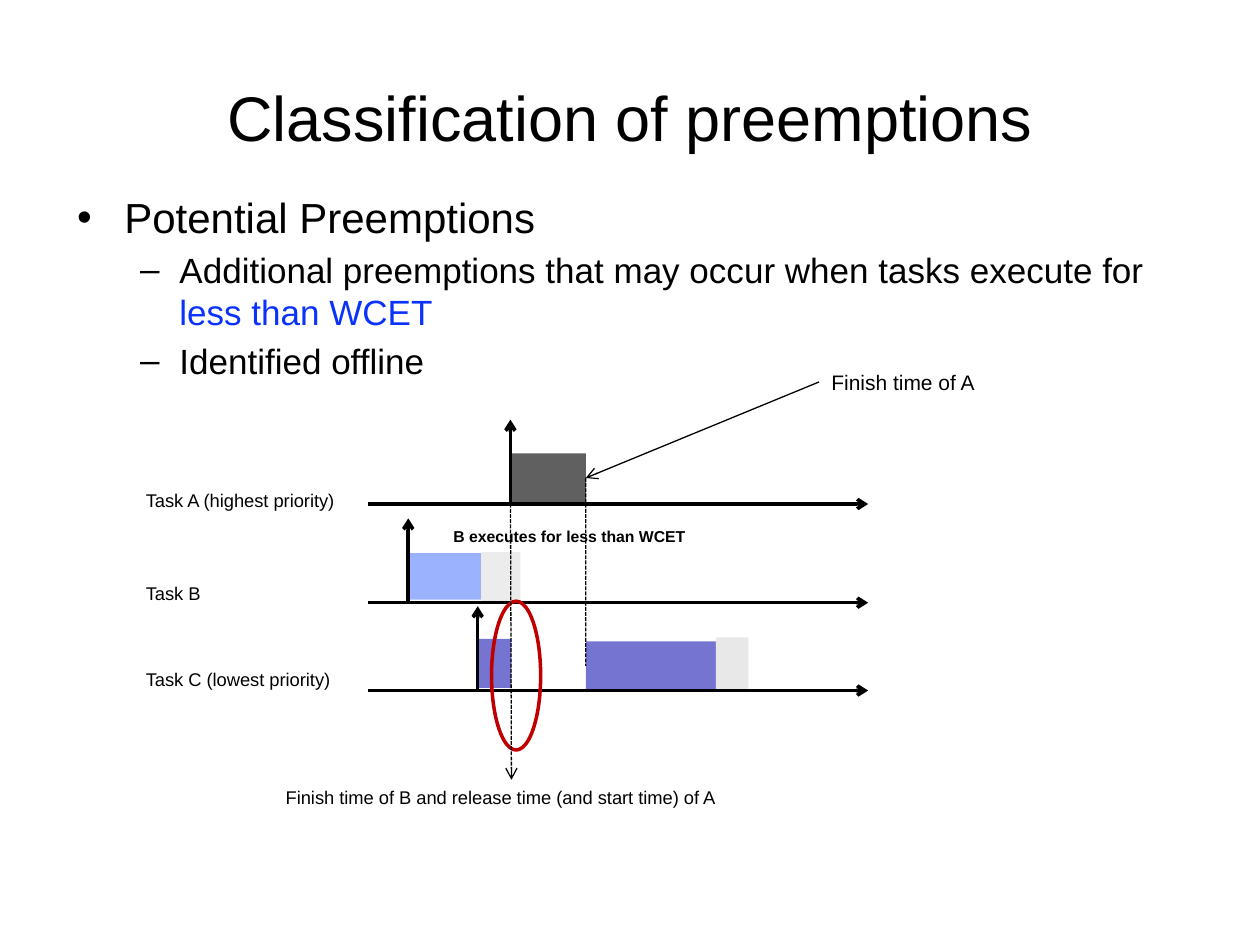
from pptx import Presentation
from pptx.dml.color import RGBColor
from pptx.enum import dml, shapes, text
from pptx.oxml.ns import qn
from pptx.util import Cm, Pt
from lxml import etree

BLACK = RGBColor(0, 0, 0)
BLUE = RGBColor(0x0A, 0x32, 0xFA)
DARK = RGBColor(0x60, 0x60, 0x60)
SKY = RGBColor(0x9B, 0xB3, 0xFF)
VIOLET = RGBColor(0x75, 0x75, 0xD1)
PALE = RGBColor(0xEC, 0xEC, 0xEC)
GREY = RGBColor(0xE8, 0xE8, 0xE8)
RED = RGBColor(0xC0, 0, 0)

AXIS_X = 7.42, 17.5
RISE = 1.7  # height of a release arrow


def style(font, size, color=BLACK, bold=None):
    font.name = "Arial"
    font.size = Pt(size)
    font.color.rgb = color
    font.bold = bold


def place(shape, x, y, w, h):
    shape.left, shape.top, shape.width, shape.height = Cm(x), Cm(y), Cm(w), Cm(h)


def title(slide):
    box = slide.shapes.title
    place(box, 1.27, 0.76, 22.86, 3.18)
    frame = box.text_frame
    frame.text = "Classification of preemptions"
    frame.vertical_anchor = text.MSO_ANCHOR.MIDDLE
    style(frame.paragraphs[0].runs[0].font, 36)


def body(slide):
    box = slide.placeholders[1]
    place(box, 1.3, 3.73, 22.86, 4.19)
    frame = box.text_frame
    frame.auto_size = text.MSO_AUTO_SIZE.NONE
    items = [
        (0, 24, [("Potential Preemptions", BLACK)]),
        (1, 20, [("Additional preemptions that may occur when tasks execute for ", BLACK),
                 ("less than WCET", BLUE)]),
        (1, 20, [("Identified offline", BLACK)]),
    ]
    for i, (level, size, runs) in enumerate(items):
        para = frame.add_paragraph() if i else frame.paragraphs[0]
        para.level = level
        if not i:
            para.space_before = Pt(0)
        for words, color in runs:
            run = para.add_run()
            run.text = words
            style(run.font, size, color)


def block(slide, x, y, w, h, color):
    rect = slide.shapes.add_shape(shapes.MSO_SHAPE.RECTANGLE, Cm(x), Cm(y), Cm(w), Cm(h))
    rect.shadow.inherit = False
    rect.fill.solid()
    rect.fill.fore_color.rgb = color
    rect.line.fill.background()
    return rect


def ring(slide, x, y, w, h):
    oval = slide.shapes.add_shape(shapes.MSO_SHAPE.OVAL, Cm(x), Cm(y), Cm(w), Cm(h))
    oval.shadow.inherit = False
    oval.fill.background()
    oval.line.color.rgb = RED
    oval.line.width = Pt(2)


def label(slide, words, x, y, w, h, size=10.5, bold=None, wrap=True):
    box = slide.shapes.add_textbox(Cm(x), Cm(y), Cm(w), Cm(h))
    frame = box.text_frame
    frame.word_wrap = wrap
    frame.auto_size = text.MSO_AUTO_SIZE.SHAPE_TO_FIT_TEXT
    frame.text = words
    style(frame.paragraphs[0].runs[0].font, size, bold=bold)
    return box


def line(slide, start, end, width=2, dash=False, arrow=True):
    link = slide.shapes.add_connector(
        shapes.MSO_CONNECTOR.STRAIGHT, *(Cm(v) for v in (*start, *end)))
    link.line.color.rgb = BLACK
    link.line.width = Pt(width)
    if dash:
        link.line.dash_style = dml.MSO_LINE.SQUARE_DOT
    if arrow:
        tail = etree.SubElement(link.line._get_or_add_ln(), qn("a:tailEnd"))
        tail.set("type", "arrow")
    etree.SubElement(link._element.spPr, qn("a:effectLst"))
    return link


def join(slide, first, side, last, end, **look):
    """Draw a thin line between the sides of two boxes."""
    link = line(slide, (0, 0), (0, 0), width=0.75, **look)
    link.begin_connect(first, side)
    link.end_connect(last, end)


def main():
    deck = Presentation()
    deck.slide_width, deck.slide_height = Cm(25.4), Cm(19.05)
    slide = deck.slides.add_slide(deck.slide_layouts[1])
    title(slide)
    body(slide)

    rest = block(slide, 11.81, 12.93, 3.2, 0.99, VIOLET)
    task = block(slide, 10.29, 9.14, 1.52, 0.99, DARK)
    block(slide, 14.43, 12.85, 0.66, 1.04, GREY)
    block(slide, 9.65, 12.88, 0.66, 0.99, VIOLET)
    block(slide, 8.23, 11.15, 2.08, 0.94, SKY)
    block(slide, 9.7, 11.13, 0.79, 0.99, PALE)

    rows = [("Task A (highest priority)", 9.73, 10.16, 10.29),
            ("Task B", 11.61, 12.15, 8.23),
            ("Task C (lowest priority)", 13.34, 13.92, 9.63)]
    for name, top, base, release in rows:
        label(slide, name, 2.69, top, 5, 0.71)
        line(slide, (AXIS_X[0], base), (AXIS_X[1], base))
        line(slide, (release, base), (release, base - RISE))

    ring(slide, 9.91, 12.12, 0.99, 3)
    label(slide, "B executes for less than WCET", 8.89, 10.49, 5.23, 0.64,
          size=9, bold=True, wrap=False)
    start = label(slide, "Finish time of B and release time (and start time) of A",
                  5.51, 15.72, 9.6, 0.71)
    finish = label(slide, "Finish time of A", 16.51, 7.32, 3.99, 0.76, size=12)
    join(slide, task, 1, start, 0, dash=True)
    join(slide, finish, 1, task, 3)
    join(slide, task, 3, rest, 1, dash=True, arrow=False)
    deck.save("out.pptx")


if __name__ == "__main__":
    main()
